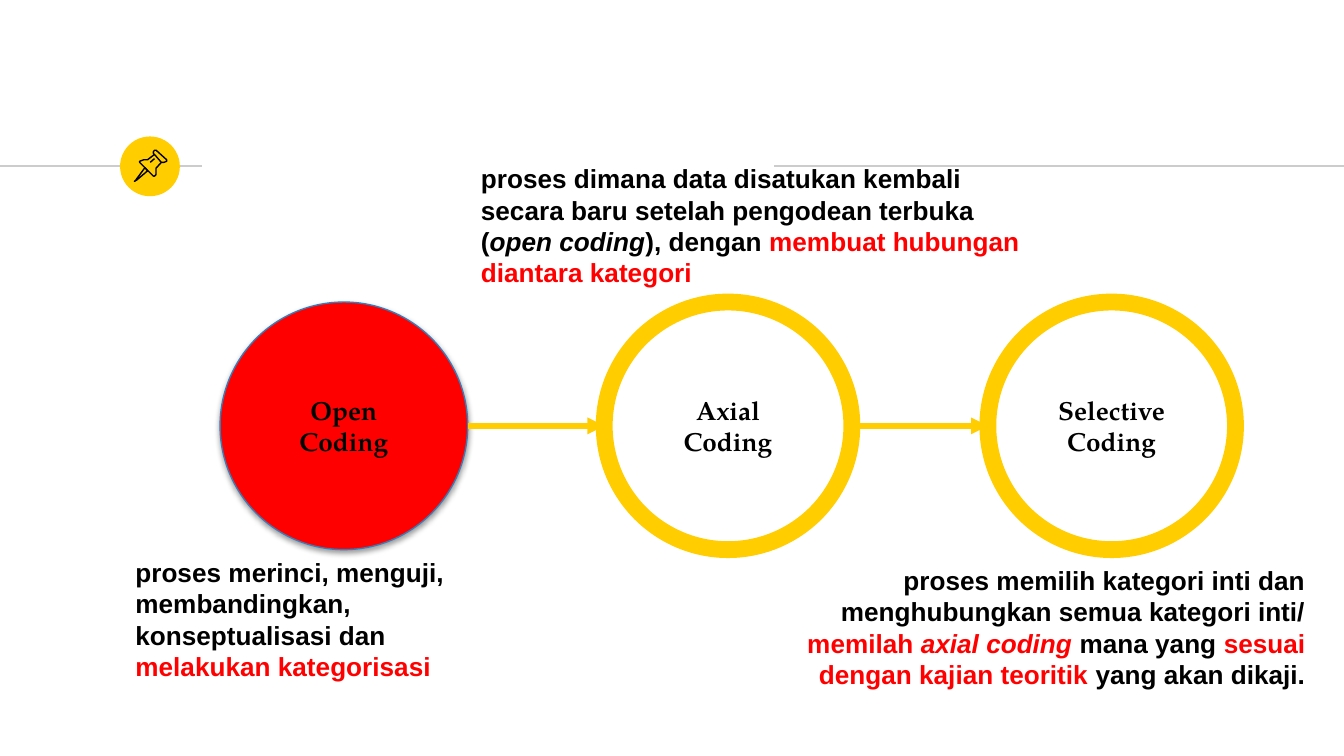
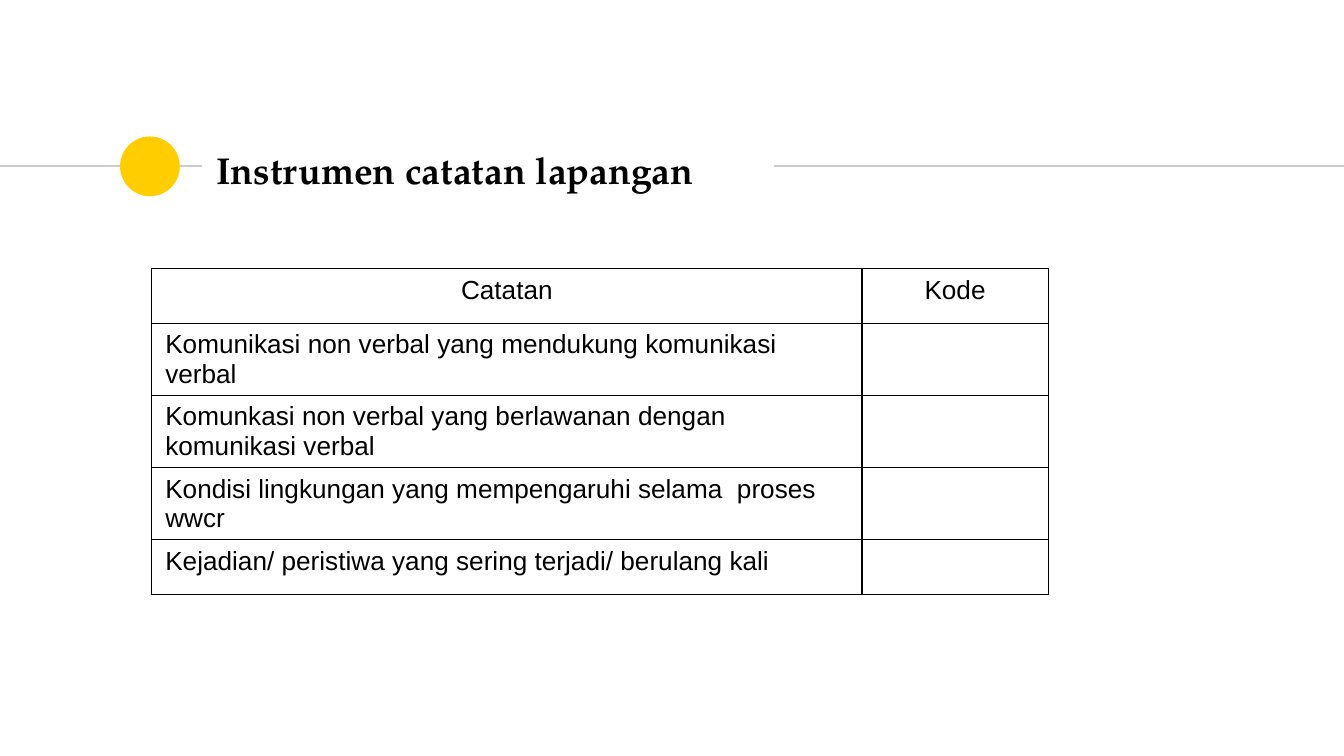
import lxml.etree
import pptx
import pptx.dml.color
import pptx.enum.dml
import pptx.enum.shapes
import pptx.enum.text
import pptx.oxml.ns
import pptx.util

Cm = pptx.util.Cm
Pt = pptx.util.Pt
RGBColor = pptx.dml.color.RGBColor
ALIGN = pptx.enum.text.PP_ALIGN
ANCHOR = pptx.enum.text.MSO_ANCHOR
AUTO_SIZE = pptx.enum.text.MSO_AUTO_SIZE
SHAPE = pptx.enum.shapes.MSO_SHAPE
STRAIGHT = pptx.enum.shapes.MSO_CONNECTOR.STRAIGHT

YELLOW = RGBColor(0xFF, 0xCD, 0x00)
RED = RGBColor(0xFF, 0x00, 0x00)
BLUE = RGBColor(0x36, 0x7E, 0xB9)
GREY = RGBColor(0xCC, 0xCC, 0xCC)
BLACK = RGBColor(0x00, 0x00, 0x00)

TITLE_FONT = {"name": "TeX Gyre Pagella", "size": Pt(20), "bold": True}
STAGE_FONT = {"name": "TeX Gyre Pagella", "size": Pt(14), "bold": True}
NOTE_FONT = {"name": "Arial", "size": Pt(14), "bold": True}
CELL_FONT = {"name": "Arial", "size": Pt(14), "bold": False}
PADDING = {"margin_left": Cm(0.25), "margin_right": Cm(0.25),
           "margin_top": Cm(0.25), "margin_bottom": Cm(0.25),
           "vertical_anchor": ANCHOR.MIDDLE, "word_wrap": True}


def write_paragraph(paragraph, runs, font_values, alignment=ALIGN.LEFT):
    paragraph.alignment = alignment
    for text, color, italic in runs:
        run = paragraph.add_run()
        run.text = text
        for name, value in {**font_values, "italic": italic}.items():
            setattr(run.font, name, value)
        run.font.color.rgb = color


def add_line(slide, left, right, y, color, width):
    connector = slide.shapes.add_connector(STRAIGHT, Cm(left), Cm(y), Cm(right), Cm(y))
    connector.line.color.rgb = color
    connector.line.width = Pt(width)
    lxml.etree.SubElement(connector._element.spPr, pptx.oxml.ns.qn("a:effectLst"))
    return connector


presentation = pptx.Presentation()
presentation.slide_width = Cm(25.4)
presentation.slide_height = Cm(14.29)
coding_slide = presentation.slides.add_slide(presentation.slide_layouts[6])
notes_slide = presentation.slides.add_slide(presentation.slide_layouts[5])

for slide in (coding_slide, notes_slide):
    add_line(slide, 0, 3.82, 3.14, GREY, 0.75)
    badge = slide.shapes.add_shape(SHAPE.OVAL, Cm(2.27), Cm(2.58), Cm(1.13), Cm(1.13))
    badge.shadow.inherit = False
    badge.fill.solid()
    badge.fill.fore_color.rgb = YELLOW
    badge.line.fill.background()
    add_line(slide, 14.63, 25.4, 3.14, GREY, 0.75)

pin_outlines = [
    ([(274, 317), (257, 340), (254, 343), (259, 340), (279, 323)], True),
    ([(292, 292), (305, 307), (310, 307), (315, 305), (315, 302),
      (295, 284), (292, 284), (290, 287), (290, 290)], True),
    ([(292, 292), (279, 302), (272, 302), (264, 305), (264, 307),
      (290, 333), (292, 333), (295, 330), (295, 318), (305, 307)], False),
    ([(284, 307), (292, 300)], False),
]
for points, closed in pin_outlines:
    builder = coding_slide.shapes.build_freeform(*points[0], scale=Cm(0.01))
    builder.add_line_segments(points[1:], close=closed)
    pin_part = builder.convert_to_shape()
    pin_part.shadow.inherit = False
    pin_part.fill.background()
    pin_part.line.color.rgb = BLACK
    pin_part.line.width = Pt(0.75)

DIAMETER = 4.68
STAGE_TOP = 5.71
stages = [("Open Coding", 4.16), ("Axial Coding", 11.42), ("Selective Coding", 18.67)]
for index, (label, left) in enumerate(stages):
    circle = coding_slide.shapes.add_shape(
        SHAPE.OVAL, Cm(left), Cm(STAGE_TOP), Cm(DIAMETER), Cm(DIAMETER))
    circle.shadow.inherit = False
    if index == 0:
        circle.fill.solid()
        circle.fill.fore_color.rgb = RED
        effects = circle._element.spPr.find(pptx.oxml.ns.qn("a:effectLst"))
        shadow = lxml.etree.SubElement(
            effects, pptx.oxml.ns.qn("a:outerShdw"), blurRad=str(Pt(3.1)),
            dist=str(Pt(1.6)), dir="5400000", rotWithShape="0")
        shade = lxml.etree.SubElement(shadow, pptx.oxml.ns.qn("a:srgbClr"), val=str(BLACK))
        lxml.etree.SubElement(shade, pptx.oxml.ns.qn("a:alpha"), val="38000")
    else:
        circle.fill.background()
    circle.line.color.rgb = YELLOW if index else BLUE
    circle.line.width = Pt(9 if index else 0.75)
    for name, value in PADDING.items():
        setattr(circle.text_frame, name, value)
    write_paragraph(circle.text_frame.paragraphs[0], [(label, BLACK, False)],
                    STAGE_FONT, ALIGN.CENTER)

for (_, left), (_, next_left) in zip(stages, stages[1:]):
    arrow = add_line(coding_slide, left + DIAMETER, next_left,
                     STAGE_TOP + DIAMETER / 2, YELLOW, 3)
    lxml.etree.SubElement(arrow.line._get_or_add_ln(),
                          pptx.oxml.ns.qn("a:tailEnd"), type="triangle")

explanations = [
    (2.31, 10.39, 7.82, ALIGN.LEFT, [
        [("proses merinci, menguji, membandingkan, konseptualisasi dan", BLACK, False)],
        [("melakukan kategorisasi", RED, False)]]),
    (8.84, 2.95, 11.23, ALIGN.LEFT, [
        [("proses dimana data disatukan kembali secara baru setelah pengodean terbuka (",
          BLACK, False),
         ("open coding", BLACK, True),
         ("), dengan ", BLACK, False),
         ("membuat hubungan diantara kategori", RED, False)]]),
    (14.61, 10.54, 10.31, ALIGN.RIGHT, [
        [("proses memilih kategori inti dan menghubungkan semua kategori inti/ ",
          BLACK, False),
         ("memilah ", RED, False),
         ("axial coding", RED, True),
         (" mana yang ", BLACK, False),
         ("sesuai dengan kajian teoritik", RED, False),
         (" yang akan dikaji.", BLACK, False)]]),
]
for left, top, width, alignment, paragraphs in explanations:
    box = coding_slide.shapes.add_textbox(Cm(left), Cm(top), Cm(width), Cm(2.64))
    frame = box.text_frame
    frame.word_wrap = True
    frame.auto_size = AUTO_SIZE.SHAPE_TO_FIT_TEXT
    for index, runs in enumerate(paragraphs):
        paragraph = frame.add_paragraph() if index else frame.paragraphs[0]
        write_paragraph(paragraph, runs, NOTE_FONT, alignment)

title = notes_slide.shapes.title
title_box = {"left": Cm(3.84), "top": Cm(2.59), "width": Cm(10.77), "height": Cm(1.22)}
for name, value in title_box.items():
    setattr(title, name, value)
for name, value in {**PADDING, "auto_size": AUTO_SIZE.NONE}.items():
    setattr(title.text_frame, name, value)
write_paragraph(title.text_frame.paragraphs[0],
                [("Instrumen catatan lapangan", BLACK, False)], TITLE_FONT)

rows = [
    ("Catatan", "Kode"),
    ("Komunikasi non verbal yang mendukung komunikasi verbal", ""),
    ("Komunkasi non verbal yang berlawanan dengan komunikasi verbal", ""),
    ("Kondisi lingkungan yang mempengaruhi selama  proses wwcr", ""),
    ("Kejadian/ peristiwa yang sering terjadi/ berulang kali", ""),
]
table = notes_slide.shapes.add_table(
    len(rows), 2, Cm(2.87), Cm(5.08), Cm(16.94), Cm(5.15)).table
table.first_row = False
table.horz_banding = False
for column, width in zip(table.columns, (13.42, 3.52)):
    column.width = Cm(width)
for row_index, texts in enumerate(rows):
    table.rows[row_index].height = Cm(1.03)
    for column_index, text in enumerate(texts):
        cell = table.cell(row_index, column_index)
        properties = cell._tc.get_or_add_tcPr()
        for side in ("a:lnL", "a:lnR", "a:lnT", "a:lnB"):
            border = lxml.etree.SubElement(properties, pptx.oxml.ns.qn(side), w=str(Pt(0.75)))
            fill = lxml.etree.SubElement(border, pptx.oxml.ns.qn("a:solidFill"))
            lxml.etree.SubElement(fill, pptx.oxml.ns.qn("a:srgbClr"), val=str(BLACK))
        cell.fill.background()
        if text:
            write_paragraph(cell.text_frame.paragraphs[0], [(text, BLACK, False)],
                            CELL_FONT, ALIGN.LEFT if row_index else ALIGN.CENTER)

presentation.save("out.pptx")
